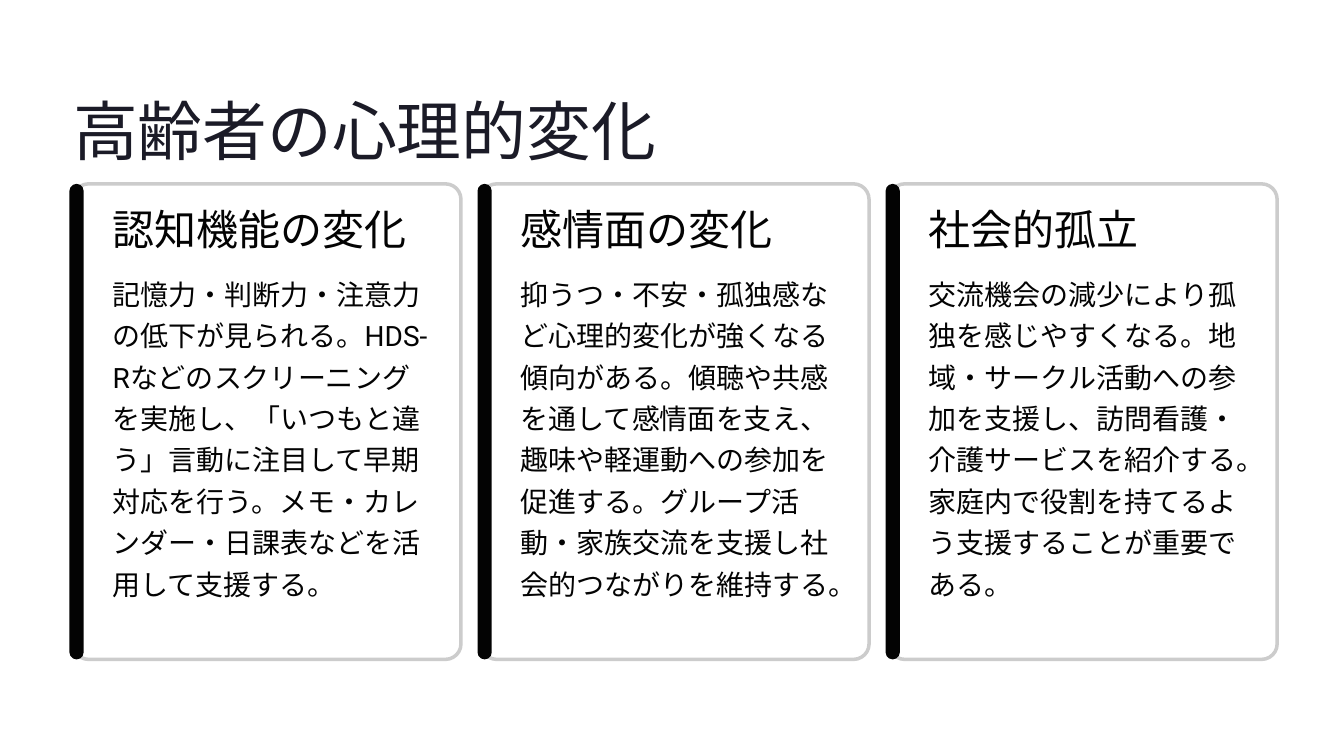
from lxml import etree
from pptx import Presentation
from pptx.dml import color
from pptx.enum import lang, shapes
from pptx.oxml import ns
from pptx.util import Cm, Pt

INK = "030303"
CARD_LEFT = 2.21
CARD_TOP = 5.56
CARD_HEIGHT = 14.38
CARD_PITCH = 12.34

CARDS = [
    ("認知機能の変化",
     "記憶力・判断力・注意力の低下が見られる。HDS-Rなどのスクリーニングを実施し、「いつもと違う」"
     "言動に注目して早期対応を行う。メモ・カレンダー・日課表などを活用して支援する。"),
    ("感情面の変化",
     "抑うつ・不安・孤独感など心理的変化が強くなる傾向がある。傾聴や共感を通して感情面を支え、"
     "趣味や軽運動への参加を促進する。グループ活動・家族交流を支援し社会的つながりを維持する。"),
    ("社会的孤立",
     "交流機会の減少により孤独を感じやすくなる。地域・サークル活動への参加を支援し、"
     "訪問看護・介護サービスを紹介する。家庭内で役割を持てるよう支援することが重要である。"),
]


def rgb(value):
    return color.RGBColor.from_string(value)


def add_text(page, content, left, top, width, height, *, size, spacing,
             font="Inter", ink=INK, wrap=False):
    box = page.shapes.add_textbox(Cm(left), Cm(top), Cm(width), Cm(height))
    frame = box.text_frame
    frame.word_wrap = wrap
    frame.margin_left = frame.margin_top = 0
    frame.margin_right = frame.margin_bottom = 0
    para = frame.paragraphs[0]
    para.line_spacing = Pt(spacing)
    span = para.add_run()
    span.text = content
    span.font.name = font
    span.font.size = Pt(size)
    span.font.color.rgb = rgb(ink)
    span.font.language_id = lang.MSO_LANGUAGE_ID.JAPANESE
    etree.SubElement(span.font._element, ns.qn("a:ea"), typeface=font)


def add_panel(page, left, width, *, fill, rounding, line=None, opacity=100):
    panel = page.shapes.add_shape(
        shapes.MSO_SHAPE.ROUNDED_RECTANGLE,
        Cm(left), Cm(CARD_TOP), Cm(width), Cm(CARD_HEIGHT))
    panel.shadow.inherit = False
    panel.adjustments[0] = rounding
    panel.fill.solid()
    panel.fill.fore_color.rgb = rgb(fill)
    if opacity < 100:
        tone = panel._element.spPr.find(".//" + ns.qn("a:srgbClr"))
        etree.SubElement(tone, ns.qn("a:alpha"), val=str(opacity * 1000))
    if line:
        panel.line.color.rgb = rgb(line)
        panel.line.width = Pt(3)
    else:
        panel.line.fill.background()


def add_card(page, left, heading, body):
    add_panel(page, left, 11.73, fill="FFFFFF", rounding=0.04,
              line="CCCCCC", opacity=95)
    add_panel(page, left - 0.11, 0.43, fill=INK, rounding=0.5)
    add_text(page, heading, left + 1.2, 6.45, 9.6, 1.3, size=36, spacing=34.5)
    add_text(page, body, left + 1.2, 8.15, 9.6, 10.67, size=24, spacing=35.5,
             font="Roboto", wrap=True)


def main():
    deck = Presentation()
    deck.slide_width = Cm(40.64)
    deck.slide_height = Cm(22.86)
    page = deck.slides.add_slide(deck.slide_layouts[6])
    add_text(page, "高齢者の心理的変化", CARD_LEFT, 2.64, 19.66, 2.34,
             size=55.5, spacing=69.5, ink="1B1B27")
    for index, (heading, body) in enumerate(CARDS):
        add_card(page, CARD_LEFT + index * CARD_PITCH, heading, body)
    deck.save("out.pptx")


if __name__ == "__main__":
    main()
